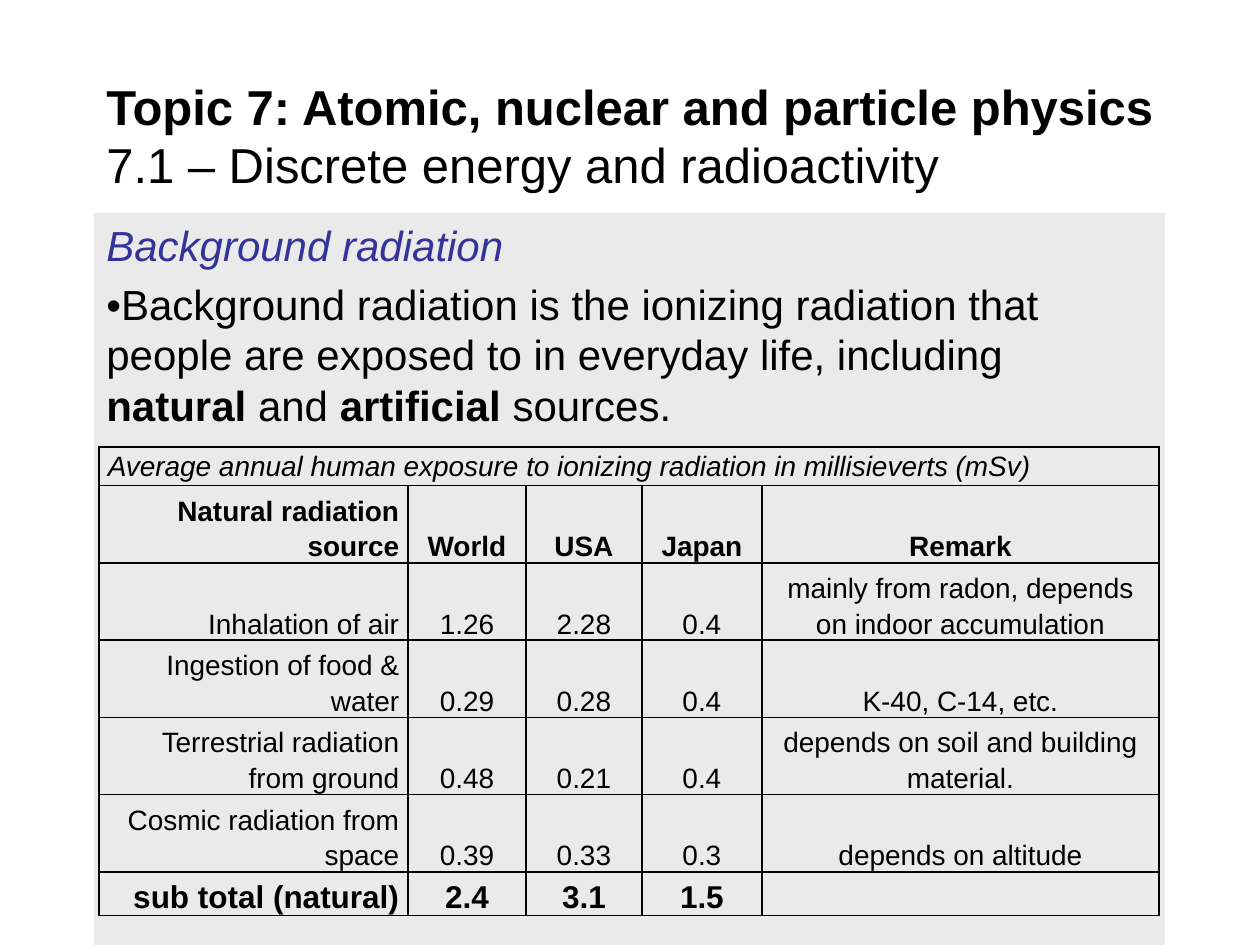
"""Build a slide on background radiation with a table of annual exposure."""
from lxml import etree
from pptx import Presentation
from pptx import util as u
from pptx.dml.color import RGBColor
from pptx.enum import shapes, text
from pptx.oxml.ns import qn

PX = 914400 // 126
BLACK = "000000"
COLUMN_WIDTHS = [309, 118, 116, 120, 397]
ROW_HEIGHTS = [36] + [71] * 5 + [41]
CAPTION = "Average annual human exposure to ionizing radiation in millisieverts (mSv)"
EXPOSURE = [
    ["Natural radiation source", "World", "USA", "Japan", "Remark"],
    ["Inhalation of air", "1.26", "2.28", "0.4",
     "mainly from radon, depends on indoor accumulation"],
    ["Ingestion of food & water", "0.29", "0.28", "0.4", "K-40, C-14, etc."],
    ["Terrestrial radiation from ground", "0.48", "0.21", "0.4",
     "depends on soil and building material."],
    ["Cosmic radiation from space", "0.39", "0.33", "0.3", "depends on altitude"],
    ["sub total (natural)", "2.4", "3.1", "1.5", ""],
]


def px(*lengths):
    """Turn pixel lengths into EMU."""
    return [u.Emu(length * PX) for length in lengths]


def color(value):
    """Return the colour for a hex string."""
    return RGBColor.from_string(value)


def style(run, size, hue=BLACK, bold=False, italic=False):
    """Set the font of one run."""
    font = run.font
    font.name, font.size = "Arial", u.Pt(size)
    font.bold, font.italic = bold, italic
    font.color.rgb = color(hue)


def add_words(paragraph, words, size, **look):
    """Append a styled run to a paragraph."""
    run = paragraph.add_run()
    run.text = words
    style(run, size, **look)


def add_heading(slide):
    """Add the topic and section heading."""
    frame = slide.shapes.add_textbox(*px(94, 73, 1101, 124)).text_frame
    frame.word_wrap = True
    frame.vertical_anchor = text.MSO_ANCHOR.MIDDLE
    heading = frame.paragraphs[0]
    add_words(heading, "Topic 7: Atomic, nuclear and particle physics", 28, bold=True)
    heading.add_line_break()
    add_words(heading, "7.1 – Discrete energy and radioactivity", 28)


def add_definition(slide):
    """Add the grey panel with the definition."""
    panel = slide.shapes.add_shape(
        shapes.MSO_SHAPE.RECTANGLE, *px(94, 213, 1071, 732))
    panel.shadow.inherit = False
    panel.fill.solid()
    panel.fill.fore_color.rgb = color("EAEAEA")
    panel.line.fill.background()
    frame = panel.text_frame
    frame.word_wrap = True
    frame.vertical_anchor = text.MSO_ANCHOR.TOP
    subject, definition = frame.paragraphs[0], frame.add_paragraph()
    for paragraph in (subject, definition):
        paragraph.alignment = text.PP_ALIGN.LEFT
        paragraph.space_before = u.Pt(5)
    add_words(subject, "Background radiation", 24, hue="333399", italic=True)
    add_words(definition, "•Background radiation is the ionizing radiation that "
              "people are exposed to in everyday life, including ", 24)
    add_words(definition, "natural", 24, bold=True)
    add_words(definition, " and ", 24)
    add_words(definition, "artificial", 24, bold=True)
    add_words(definition, " sources.", 24)


def add_borders(cell):
    """Draw a thin black line on each side of a cell."""
    properties = cell._tc.get_or_add_tcPr()
    for place, side in enumerate(("a:lnL", "a:lnR", "a:lnT", "a:lnB")):
        line = etree.Element(qn(side), w=str(u.Pt(1)))
        fill = etree.SubElement(line, qn("a:solidFill"))
        etree.SubElement(fill, qn("a:srgbClr"), val=BLACK)
        properties.insert(place, line)


def fill_cell(cell, words, alignment, size=16, **look):
    """Set the text and layout of one table cell."""
    cell.vertical_anchor = text.MSO_ANCHOR.BOTTOM
    paragraph = cell.text_frame.paragraphs[0]
    paragraph.text = words
    paragraph.alignment = alignment
    paragraph.line_spacing = 1.15
    for run in paragraph.runs:
        style(run, size, **look)


def add_exposure_table(slide):
    """Add the table of exposure by natural source."""
    table = slide.shapes.add_table(
        len(ROW_HEIGHTS), len(COLUMN_WIDTHS),
        *px(99, 447, sum(COLUMN_WIDTHS), sum(ROW_HEIGHTS))).table
    table.first_row = table.horz_banding = False
    for column, width in zip(table.columns, px(*COLUMN_WIDTHS)):
        column.width = width
    for row, height in zip(table.rows, px(*ROW_HEIGHTS)):
        row.height = height
    for cell in table.iter_cells():
        cell.fill.background()
        cell.margin_left = cell.margin_right = u.Inches(0.07)
        cell.margin_top = cell.margin_bottom = 0
        add_borders(cell)
    caption = table.cell(0, 0)
    caption.merge(table.cell(0, len(COLUMN_WIDTHS) - 1))
    fill_cell(caption, CAPTION, text.PP_ALIGN.LEFT, italic=True)
    caption.vertical_anchor = text.MSO_ANCHOR.TOP
    last = len(EXPOSURE)
    for r, entries in enumerate(EXPOSURE, start=1):
        for c, words in enumerate(entries):
            alignment = text.PP_ALIGN.CENTER if c else text.PP_ALIGN.RIGHT
            fill_cell(table.cell(r, c), words, alignment,
                      size=18 if r == last else 16, bold=r in (1, last))


def main():
    """Build and save the slide."""
    deck = Presentation()
    deck.slide_width, deck.slide_height = px(1260, 945)
    slide = deck.slides.add_slide(deck.slide_layouts[6])
    add_definition(slide)
    add_heading(slide)
    add_exposure_table(slide)
    deck.save("out.pptx")


if __name__ == "__main__":
    main()
